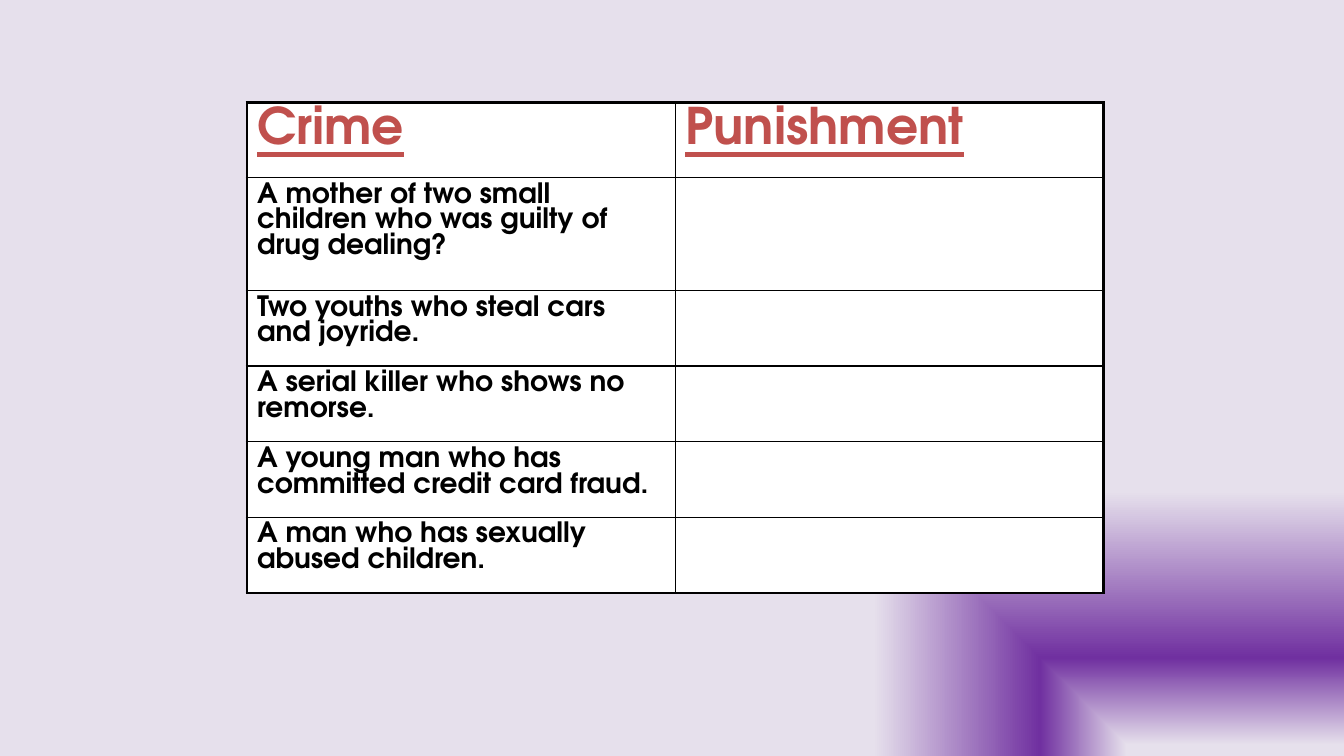
from dataclasses import dataclass

from lxml.etree import SubElement
from pptx import Presentation
from pptx.dml.color import RGBColor
from pptx.oxml.ns import qn
from pptx.table import _Cell
from pptx.util import Inches, Pt

BLACK = RGBColor(0x00, 0x00, 0x00)
WHITE = RGBColor(0xFF, 0xFF, 0xFF)
RED = RGBColor(0xC0, 0x50, 0x4D)
LILAC = RGBColor(0xE6, 0xE0, 0xEC)
PURPLE = RGBColor(0x70, 0x30, 0xA0)

FONT = "TeX Gyre Adventor"
WIDE, HIGH = Inches(13.33), Inches(7.5)
COLS, ROWS = 160, 90  # slide grid
THIN, THICK = Pt(1), Pt(2.25)
PITCH = 0.92  # line pitch as a share of the text size

HEAD = {"name": FONT, "size": Pt(36), "bold": True, "underline": True}
BODY = {"name": FONT, "size": Pt(20), "bold": True}
STOPS = ((3, LILAC), (26, PURPLE), (70, LILAC))


@dataclass
class Row:
    high: float  # in grid rows
    texts: tuple[str, str]
    style: dict
    color: RGBColor


def crime(text: str, high: float = 9) -> Row:
    return Row(high, (text, ""), BODY, BLACK)


LINES = [
    Row(8.9, ("Crime", "Punishment"), HEAD, RED),
    crime("A mother of two small children who was guilty of drug dealing?", 13.45),
    crime("Two youths who steal cars and joyride."),
    crime("A serial killer who shows no remorse."),
    crime("A young man who has committed credit card fraud."),
    crime("A man who has sexually abused children."),
]


def across(cols: float) -> int:
    return round(WIDE * cols / COLS)


def down(rows: float) -> int:
    return round(HIGH * rows / ROWS)


def paint(slide) -> None:
    """Fill the background with a gradient that spreads from the lower right."""
    slide.background.fill.gradient()
    grad = next(slide.element.iter(qn("a:gradFill")))
    for part in list(grad):
        grad.remove(part)
    stops = SubElement(grad, qn("a:gsLst"))
    for place, color in STOPS:
        stop = SubElement(stops, qn("a:gs"), pos=str(place * 1000))
        SubElement(stop, qn("a:srgbClr"), val=str(color))
    shade = SubElement(grad, qn("a:path"), path="rect")
    SubElement(shade, qn("a:fillToRect"), l="100000", t="100000")


def edge(cell: _Cell, sides: dict[str, int]) -> None:
    props = cell._tc.get_or_add_tcPr()
    for side, width in sides.items():
        line = SubElement(props, qn(f"a:ln{side}"), w=str(width))
        fill = SubElement(line, qn("a:solidFill"))
        SubElement(fill, qn("a:srgbClr"), val=str(BLACK))


def write(cell: _Cell, text: str, row: Row) -> None:
    para = cell.text_frame.paragraphs[0]
    para.line_spacing = Pt(round(row.style["size"].pt * PITCH, 1))
    run = para.add_run()
    run.text = text
    for key, value in row.style.items():
        setattr(run.font, key, value)
    run.font.color.rgb = row.color


def chart(slide) -> None:
    """Draw the table of crimes and punishments."""
    total = sum(row.high for row in LINES)
    frame = slide.shapes.add_table(
        len(LINES), 2, across(29.4), down(12.24), across(102), down(total))
    table = frame.table
    table.first_row = table.horz_banding = False
    for col in table.columns:
        col.width = across(51)
    last = len(LINES) - 1
    for i, row in enumerate(LINES):
        table.rows[i].height = down(row.high)
        for j, text in enumerate(row.texts):
            cell = table.cell(i, j)
            edge(cell, {
                "L": THICK if j == 0 else THIN,
                "R": THICK if j == 1 else THIN,
                "T": THICK if i == 0 else THIN,
                "B": THICK if i == last else THIN,
            })
            cell.fill.solid()
            cell.fill.fore_color.rgb = WHITE
            if text:
                write(cell, text, row)


def main() -> None:
    deck = Presentation()
    deck.slide_width, deck.slide_height = WIDE, HIGH
    slide = deck.slides.add_slide(deck.slide_layouts[6])
    # Background
    paint(slide)
    # Table
    chart(slide)
    deck.save("out.pptx")


if __name__ == "__main__":
    main()
